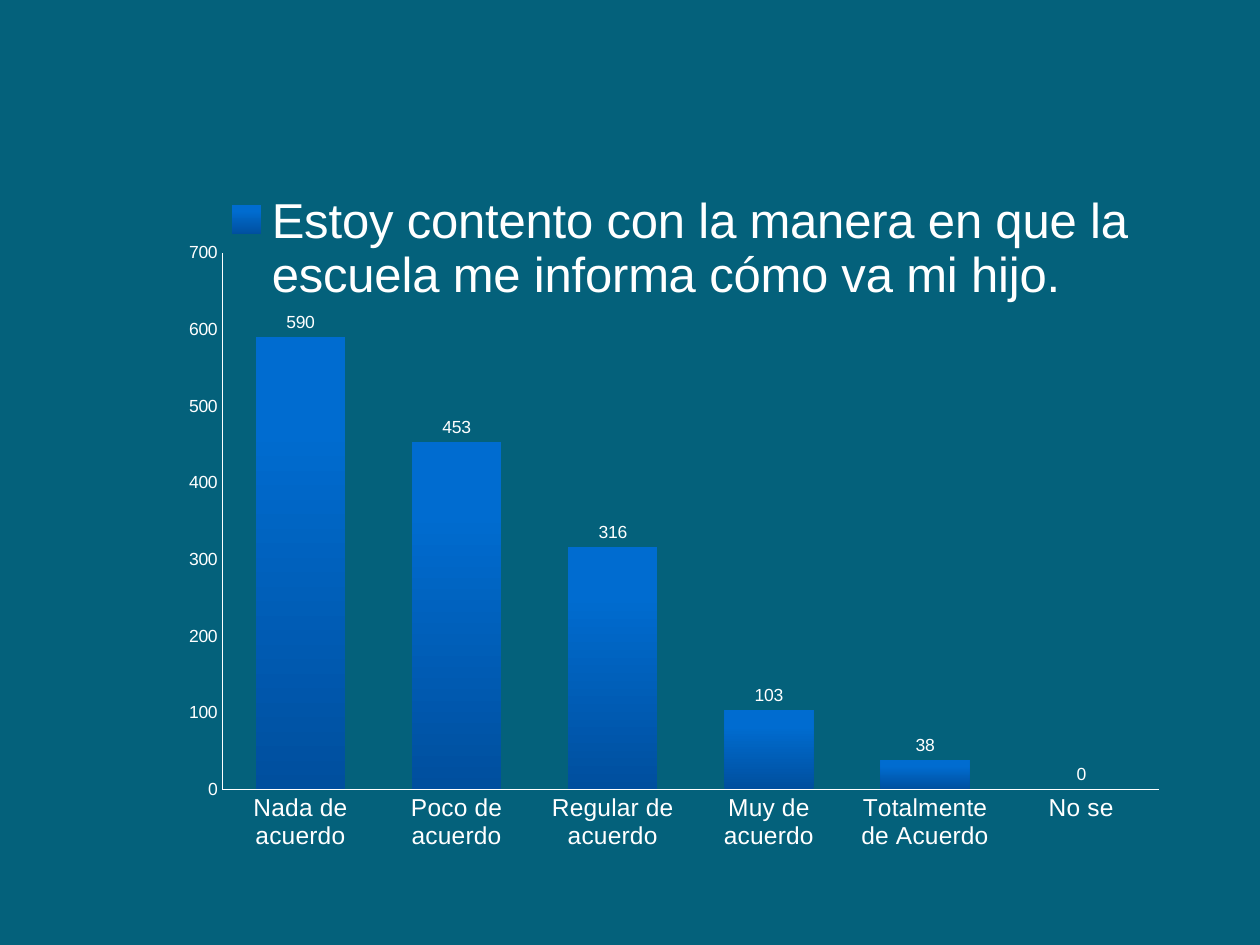
from lxml import etree
from pptx import Presentation
from pptx.chart import data
from pptx.dml.color import RGBColor
from pptx.enum import chart as kinds
from pptx.oxml import ns
from pptx.util import Pt

COLORS = {"background": "04617B", "text": "FFFFFF", "bar_top": "006CD0", "bar_bottom": "004F9E"}
ANSWERS = {
    "Nada de acuerdo": 590,
    "Poco de acuerdo": 453,
    "Regular de acuerdo": 316,
    "Muy de acuerdo": 103,
    "Totalmente de Acuerdo": 38,
    "No se": 0,
}


def color(name):
    return RGBColor.from_string(COLORS[name])


def place(parent, index, settings):
    for old in parent.findall(ns.qn("c:layout")):
        parent.remove(old)
    layout = etree.Element(ns.qn("c:layout"))
    manual = etree.SubElement(layout, ns.qn("c:manualLayout"))
    for tag, value in settings.items():
        etree.SubElement(manual, ns.qn("c:" + tag)).set("val", str(value))
    parent.insert(index, layout)


deck = Presentation()
deck.slide_width, deck.slide_height = Pt(720), Pt(540)
page = deck.slides.add_slide(deck.slide_layouts[6])
page.background.fill.solid()
page.background.fill.fore_color.rgb = color("background")

survey = data.CategoryChartData()
survey.categories = list(ANSWERS)
survey.add_series(
    "Estoy contento con la manera en que la escuela me informa cómo va mi hijo.",
    list(ANSWERS.values()),
)
chart = page.shapes.add_chart(
    kinds.XL_CHART_TYPE.COLUMN_CLUSTERED, Pt(93.6), Pt(88.56), Pt(578.16), Pt(414), survey
).chart
chart.has_title = False
chart.font.name = "Arial"
chart.font.size = Pt(10)
chart.font.color.rgb = color("text")

for axis, size in ((chart.category_axis, 14), (chart.value_axis, 10)):
    axis.has_major_gridlines = False
    axis.major_tick_mark = kinds.XL_TICK_MARK.NONE
    axis.minor_tick_mark = kinds.XL_TICK_MARK.NONE
    axis.format.line.color.rgb = color("text")
    axis.format.line.width = Pt(0.75)
    axis.tick_labels.font.size = Pt(size)
    axis.tick_labels.font.color.rgb = color("text")
chart.value_axis.minimum_scale = 0
chart.value_axis.maximum_scale = 700
chart.value_axis.major_unit = 100

plot = chart.plots[0]
plot.gap_width = 75
plot.vary_by_categories = False
plot.has_data_labels = True
plot.data_labels.show_value = True
plot.data_labels.position = kinds.XL_LABEL_POSITION.OUTSIDE_END
plot.data_labels.font.size = Pt(10)
plot.data_labels.font.color.rgb = color("text")

bars = plot.series[0].format
bars.line.fill.background()
bars.fill.gradient()
bars.fill.gradient_angle = 90
for stop, name, position in zip(bars.fill.gradient_stops, ("bar_bottom", "bar_top"), (0, 0.8)):
    stop.color.rgb = color(name)
    stop.position = position

chart.has_legend = True
legend = chart.legend
legend.position = kinds.XL_LEGEND_POSITION.BOTTOM
legend.include_in_layout = False
legend.font.size = Pt(28)
legend.font.color.rgb = color("text")

edges = {"xMode": "edge", "yMode": "edge"}
chart_root = chart.element
place(
    chart_root.find(".//" + ns.qn("c:plotArea")), 0,
    {"layoutTarget": "inner", **edges, "x": 0.058, "y": 0.135, "w": 0.926, "h": 0.741},
)
place(
    chart_root.find(".//" + ns.qn("c:legend")), 1,
    {**edges, "x": 0.05, "y": 0.05, "w": 0.92, "h": 0.16},
)

deck.save("out.pptx")
